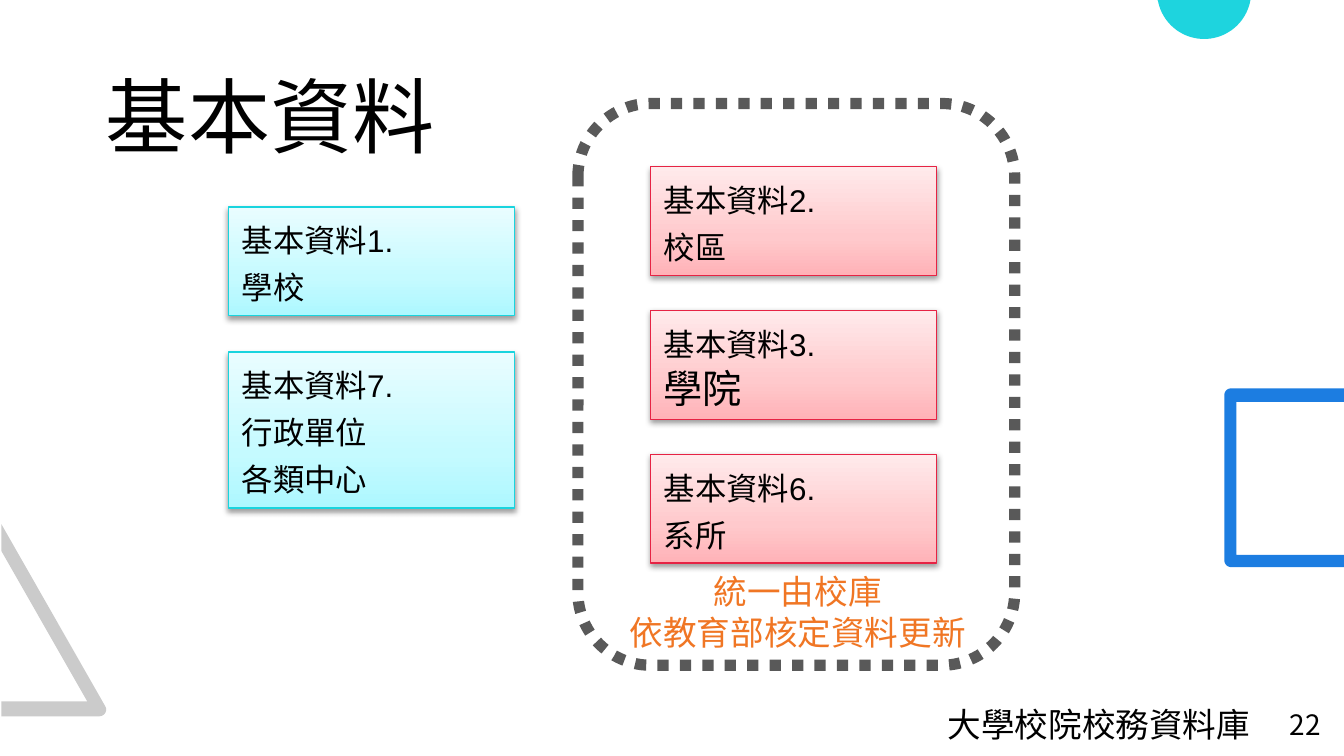
import math
from lxml import etree
from pptx import Presentation, util as u
from pptx.dml import color
from pptx.enum import shapes, text, dml
from pptx.oxml import parse_xml
from pptx.oxml.ns import qn

Inches, Pt = u.Inches, u.Pt
A_NS = 'xmlns:a="http://schemas.openxmlformats.org/drawingml/2006/main"'
C = {
    "black": "000000", "grey": "CBCBCB", "cyan": "1ED4DE", "blue": "1C7DE1",
    "dots": "595959", "orange": "F07624", "cyan_line": "19D4DE", "red_line": "E62344",
}
GRADIENTS = {
    "cyan_line": [(0, "ADF8FF"), (35, "C5FAFF"), (100, "E9FDFF")],
    "red_line": [(0, "FFB2B7"), (35, "FFC9CC"), (100, "FFEAEB")],
}

# 16:9 slide, 10 inches wide
prs = Presentation()
prs.slide_width, prs.slide_height = Inches(10), Inches(10 * 9 / 16)
s = prs.slides.add_slide(prs.slide_layouts[6])


def write(sp, lines, size, font="Arial", col="black", align=text.PP_ALIGN.LEFT,
          anchor=text.MSO_ANCHOR.MIDDLE, small=(), margin_y=0.05):
    """Fill a shape with one paragraph per line; small lists the small-caps lines."""
    tf = sp.text_frame
    tf.word_wrap = True
    tf.vertical_anchor = anchor
    tf.margin_top = tf.margin_bottom = Inches(margin_y)
    for i, line in enumerate(lines):
        p = tf.paragraphs[0] if i == 0 else tf.add_paragraph()
        p.alignment = align
        r = p.add_run()
        r.text = line
        r.font.size, r.font.name = Pt(size), font
        r.font.color.rgb = color.RGBColor.from_string(C[col])
        rPr = r.font._element
        etree.SubElement(rPr, qn("a:ea")).set("typeface", font)
        if i in small:
            rPr.set("cap", "small")


def arc(cx, cy, radius, start, end, steps=12):
    """Points along an arc, in degrees, clockwise from the right."""
    angles = [math.radians(start + (end - start) * i / steps) for i in range(steps + 1)]
    return [(cx + radius * math.cos(a), cy + radius * math.sin(a)) for a in angles]


# Decorations cut by the slide edges
triangle = [(0.01, 5.33), (0.01, 5.22), (0.65, 5.22), (0.01, 4.1), (0.01, 3.9),
            *arc(0.74, 5.28, 0.05, -30, 90)]
disc = [(8.61, 0), (9.3, 0), *arc(8.96, -0.06, 0.35, 10, 170, 40)]
bracket = [(10, 4.22), (10, 4.13), (9.2, 4.13), (9.2, 2.99), (10, 2.99), (10, 2.89),
           *arc(9.16, 2.94, 0.05, 270, 180), *arc(9.16, 4.17, 0.05, 180, 90)]
for points, col in ((triangle, "grey"), (disc, "cyan"), (bracket, "blue")):
    (x, y), *rest = points
    fb = s.shapes.build_freeform(Inches(x), Inches(y))
    fb.add_line_segments([(Inches(px), Inches(py)) for px, py in rest])
    sp = fb.convert_to_shape()
    sp.shadow.inherit = False
    sp.fill.solid()
    sp.fill.fore_color.rgb = color.RGBColor.from_string(C[col])
    sp.line.fill.background()

# Title
sp = s.shapes.add_textbox(Inches(0.69), Inches(0.25), Inches(8.62), Inches(1.21))
write(sp, ["基本資料"], 44)

# Data boxes: left, top, height, line colour, lines, small-caps lines
LEFT, RIGHT = 1.7, 4.84
boxes = [
    (LEFT, 1.54, 0.81, "cyan_line", ["基本資料1.", "學校"], (0, 1)),
    (RIGHT, 1.24, 0.81, "red_line", ["基本資料2.", "校區"], (0, 1)),
    (RIGHT, 2.31, 0.81, "red_line", ["基本資料3.", "學院"], (0,)),
    (RIGHT, 3.38, 0.81, "red_line", ["基本資料6.", "系所"], (0, 1)),
    (LEFT, 2.62, 1.16, "cyan_line", ["基本資料7.", "行政單位", "各類中心"], (0, 1, 2)),
]
for x, y, h, col, lines, small in boxes:
    sp = s.shapes.add_shape(shapes.MSO_SHAPE.RECTANGLE, Inches(x), Inches(y), Inches(2.13), Inches(h))
    sp.line.color.rgb = color.RGBColor.from_string(C[col])
    sp.line.width = Pt(0.75)
    stops = "".join(f'<a:gs pos="{pos * 1000}"><a:srgbClr val="{c}"/></a:gs>'
                    for pos, c in GRADIENTS[col])
    spPr = sp._element.spPr
    spPr.find(qn("a:prstGeom")).addnext(parse_xml(
        f'<a:gradFill {A_NS} rotWithShape="1"><a:gsLst>{stops}</a:gsLst>'
        '<a:lin ang="16200000" scaled="0"/></a:gradFill>'))
    spPr.append(parse_xml(
        f'<a:effectLst {A_NS}><a:outerShdw blurRad="{Pt(3.1)}" dist="{Pt(1.6)}" dir="5400000" '
        f'rotWithShape="0"><a:srgbClr val="{C["black"]}"><a:alpha val="38000"/></a:srgbClr>'
        '</a:outerShdw></a:effectLst>'))
    write(sp, lines, 21, anchor=text.MSO_ANCHOR.TOP, small=small)

# Dotted frame around the centrally updated boxes
sp = s.shapes.add_shape(shapes.MSO_SHAPE.ROUNDED_RECTANGLE,
                        Inches(4.3), Inches(0.77), Inches(3.25), Inches(4.18))
sp.shadow.inherit = False
sp.fill.background()
sp.line.color.rgb = color.RGBColor.from_string(C["dots"])
sp.line.width = Pt(6)
sp.line.dash_style = dml.MSO_LINE.ROUND_DOT

# Frame caption
sp = s.shapes.add_textbox(Inches(4.31), Inches(4.2), Inches(3.25), Inches(0.7))
write(sp, ["統一由校庫", "依教育部核定資料更新"], 18, col="orange", align=text.PP_ALIGN.CENTER)

# Footer and page number
NOTO = "Noto Sans CJK TC"
sp = s.shapes.add_textbox(Inches(5.15), Inches(5.24), Inches(4.25), Inches(0.3))
write(sp, ["大學校院校務資料庫"], 18, font=NOTO, align=text.PP_ALIGN.RIGHT, margin_y=0.04)
sp = s.shapes.add_textbox(Inches(9.5), Inches(5.24), Inches(0.5), Inches(0.3))
write(sp, ["22"], 15, font=NOTO, margin_y=0.04)

prs.save("out.pptx")
